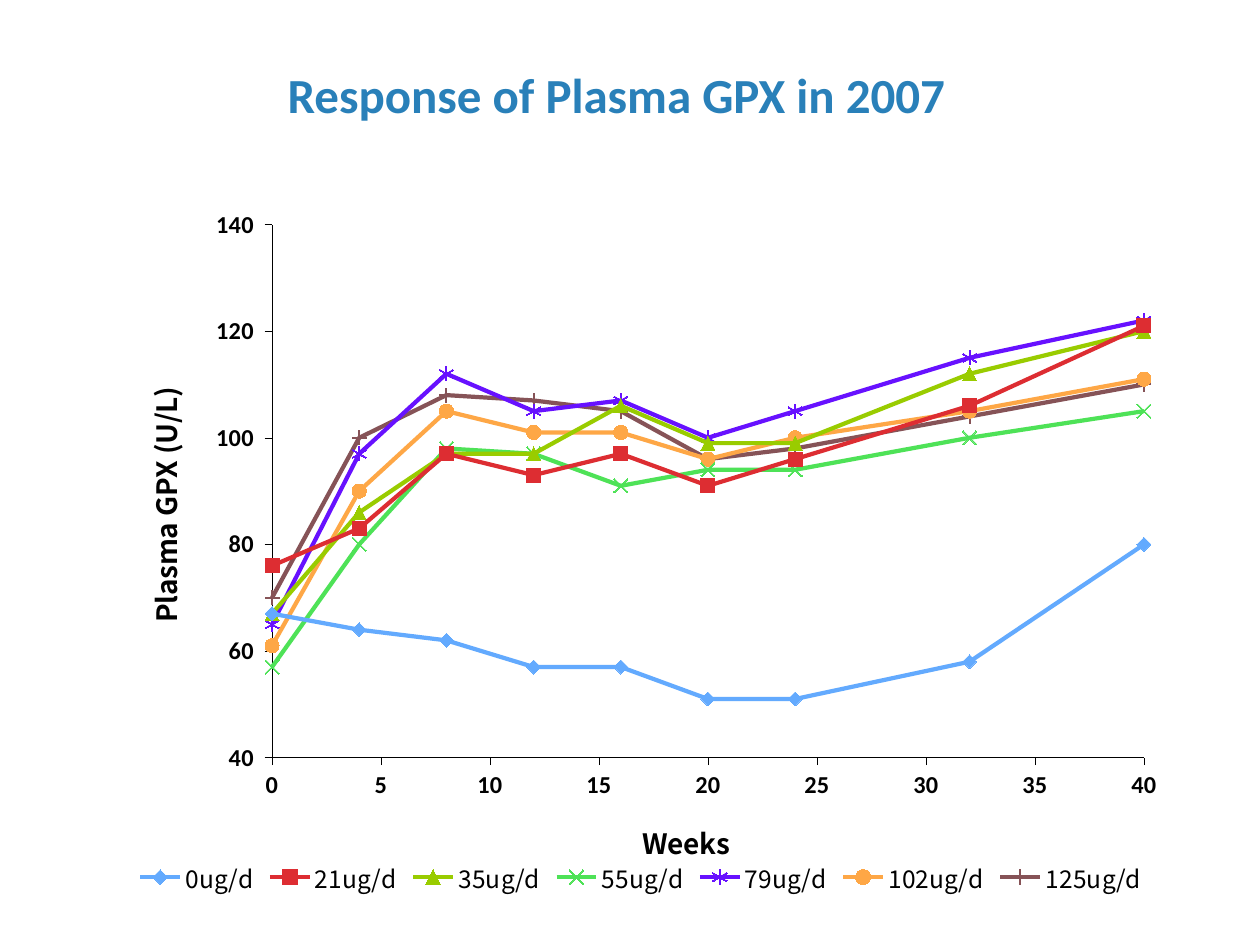
from lxml.etree import SubElement
from pptx import Presentation
from pptx.chart.data import XyChartData
from pptx.dml.color import RGBColor
from pptx.enum.chart import (XL_CHART_TYPE, XL_LEGEND_POSITION,
                             XL_MARKER_STYLE as MARK, XL_TICK_MARK)
from pptx.enum.shapes import MSO_SHAPE
from pptx.enum.text import MSO_ANCHOR, PP_ALIGN
from pptx.oxml import parse_xml
from pptx.oxml.ns import nsdecls, qn
from pptx.util import Pt

THEME = {
    "back": "F9F9F9", "panel": "FFFFFF", "ink": "000000", "title": "2980B9",
    "head": "Calibri", "body": "Noto Sans CJK SC",
    "title_size": 28, "label_size": 16, "key_size": 14, "tick_size": 13.9,
    "base_size": 9.6, "line": 2.41, "axis": 0.3, "mark": 8,
}
WEEKS = [0, 4, 8, 12, 16, 20, 24, 32, 40]
DOSES = [
    ("0ug/d", "63AAFE", MARK.DIAMOND, [67, 64, 62, 57, 57, 51, 51, 58, 80]),
    ("21ug/d", "DD2D32", MARK.SQUARE, [76, 83, 97, 93, 97, 91, 96, 106, 121]),
    ("35ug/d", "99CC00", MARK.TRIANGLE, [67, 86, 97, 97, 106, 99, 99, 112, 120]),
    ("55ug/d", "4EE257", MARK.X, [57, 80, 98, 97, 91, 94, 94, 100, 105]),
    ("79ug/d", "6711FF", MARK.STAR, [65, 97, 112, 105, 107, 100, 105, 115, 122]),
    ("102ug/d", "FEA746", MARK.CIRCLE, [61, 90, 105, 101, 101, 96, 100, 105, 111]),
    ("125ug/d", "865357", MARK.PLUS, [70, 100, 108, 107, 105, 96, 98, 104, 110]),
]
OPEN = (MARK.X, MARK.STAR, MARK.PLUS)


def px(*spans):
    """Turn pixels, 126 to the inch, into EMU."""
    return [round(span * 914400 / 126) for span in spans]


def style(font, size, face, color="ink", bold=False):
    font.size = Pt(THEME[size])
    font.name = THEME[face]
    font.color.rgb = RGBColor.from_string(THEME[color])
    font.bold = bold


deck = Presentation()
deck.slide_width, deck.slide_height = px(1260, 945)
slide = deck.slides.add_slide(deck.slide_layouts[5])
back = slide.background.fill
back.solid()
back.fore_color.rgb = RGBColor.from_string(THEME["back"])

# Title
title = slide.shapes.title
title.left, title.top, title.width, title.height = px(275, 58, 709, 72)
frame = title.text_frame
frame.text = "Response of Plasma GPX in 2007"
frame.vertical_anchor = MSO_ANCHOR.MIDDLE
frame.paragraphs[0].alignment = PP_ALIGN.LEFT
style(frame.paragraphs[0].font, "title_size", "head", "title", True)

# White panel, placed behind the title
panel = slide.shapes.add_shape(MSO_SHAPE.RECTANGLE, *px(0, 0, 1260, 945))
panel.shadow.inherit = False
panel.fill.solid()
panel.fill.fore_color.rgb = RGBColor.from_string(THEME["panel"])
panel.line.fill.background()
title.element.addprevious(panel.element)

# Chart
data = XyChartData()
for name, color, mark, levels in DOSES:
    dose = data.add_series(name)
    for week, level in zip(WEEKS, levels):
        dose.add_data_point(week, level)
chart = slide.shapes.add_chart(
    XL_CHART_TYPE.XY_SCATTER_LINES, *px(82, 189, 1118, 711), data).chart
chart.has_title = False
style(chart.font, "base_size", "body")
chart.plots[0].vary_by_categories = False

for line, (name, color, mark, levels) in zip(chart.plots[0].series, DOSES):
    rgb = RGBColor.from_string(color)
    line.smooth = False
    line.format.line.width = Pt(THEME["line"])
    line.format.line.color.rgb = rgb
    line.marker.style = mark
    line.marker.size = THEME["mark"]
    line.marker.format.line.color.rgb = rgb
    fill = line.marker.format.fill
    if mark in OPEN:
        fill.background()
    else:
        fill.solid()
        fill.fore_color.rgb = rgb

# Axes
weeks, level = chart.category_axis, chart.value_axis
for axis, label in ((weeks, "Weeks"), (level, "Plasma GPX (U/L)")):
    axis.has_major_gridlines = False
    axis.major_tick_mark = XL_TICK_MARK.OUTSIDE
    axis.minor_tick_mark = XL_TICK_MARK.NONE
    axis.format.line.width = Pt(THEME["axis"])
    axis.format.line.color.rgb = RGBColor.from_string(THEME["ink"])
    style(axis.tick_labels.font, "tick_size", "head", bold=True)
    text = axis.axis_title.text_frame
    text.text = label
    style(text.paragraphs[0].font, "label_size", "body", bold=True)
weeks.minimum_scale, weeks.maximum_scale, weeks.major_unit = 0, 40, 5
level.minimum_scale, level.maximum_scale, level.major_unit = 40, 140, 20
level.tick_labels.number_format = r"0_);[Red]\(0\)"
level.tick_labels.number_format_is_linked = False

# Legend
chart.has_legend = True
chart.legend.position = XL_LEGEND_POSITION.BOTTOM
chart.legend.include_in_layout = False
style(chart.legend.font, "key_size", "body")

# Plot position and chart fill
area = chart.element.find(qn("c:chart")).find(qn("c:plotArea"))
for old in area.findall(qn("c:layout")):
    area.remove(old)
layout = parse_xml(f"<c:layout {nsdecls('c')}><c:manualLayout/></c:layout>")
area.insert(0, layout)
for tag, value in (("layoutTarget", "inner"), ("xMode", "edge"),
                   ("yMode", "edge"), ("x", 0.17), ("y", 0.05),
                   ("w", 0.78), ("h", 0.75)):
    SubElement(layout[0], qn(f"c:{tag}")).set("val", str(value))
chart.element.find(qn("c:chart")).addnext(parse_xml(
    f"<c:spPr {nsdecls('c', 'a')}><a:solidFill><a:srgbClr val='{THEME['panel']}'/>"
    "</a:solidFill><a:ln><a:noFill/></a:ln></c:spPr>"))

deck.save("out.pptx")
